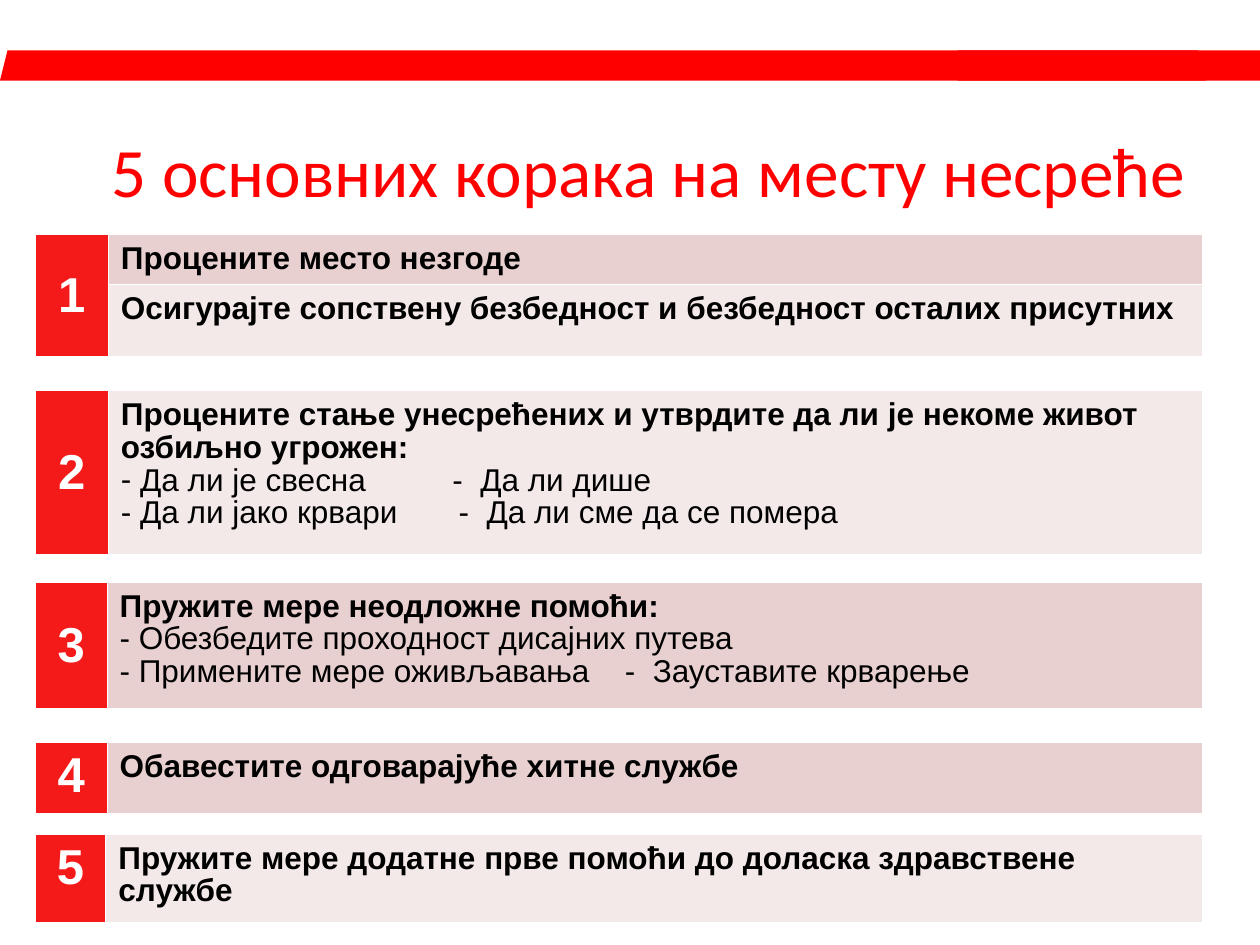
from lxml.etree import SubElement
from pptx import Presentation
from pptx.dml.color import RGBColor
from pptx.enum.shapes import MSO_SHAPE as Shape
from pptx.enum.text import MSO_ANCHOR as Anchor, PP_ALIGN as Align
from pptx.oxml.ns import qn
from pptx.util import Inches, Pt

RED = RGBColor(0xFF, 0x00, 0x00)
NUMBER_RED = RGBColor(0xF4, 0x1A, 0x1A)
ROSE = RGBColor(0xE8, 0xD0, 0xD0)
PALE = RGBColor(0xF4, 0xE9, 0xE9)
WHITE = RGBColor(0xFF, 0xFF, 0xFF)
BLACK = RGBColor(0x00, 0x00, 0x00)

GAP = None


def write(paragraph, text, size=18, font="Arial", color=BLACK, bold=False,
          align=Align.LEFT, spacing=None, bullet=None, tab=None):
    paragraph.alignment = align
    if spacing:
        paragraph.line_spacing = spacing
    properties = paragraph._p.get_or_add_pPr()
    if bullet:
        properties.set("marL", "0")
        properties.set("indent", "0")
        tint = SubElement(properties, qn("a:buClr"))
        SubElement(tint, qn("a:srgbClr"), val=str(color))
        SubElement(properties, qn("a:buFont"), typeface=font)
        SubElement(properties, qn("a:buChar"), char=bullet)
    if tab:
        stops = SubElement(properties, qn("a:tabLst"))
        SubElement(stops, qn("a:tab"), pos=str(Inches(tab)), algn="l")
    run = paragraph.add_run()
    run.text = text
    run.font.size = Pt(size)
    run.font.name = font
    run.font.bold = bold
    run.font.color.rgb = color


class StepsSlide:
    left, width = 0.28, 9.26
    line_spacing = 0.93
    border = Pt(0.45)

    def __init__(self, slide):
        self.slide = slide

    def band(self, kind, left, width):
        band = self.slide.shapes.add_shape(
            kind, Inches(left), Inches(0.4), Inches(width), Inches(0.24))
        band.shadow.inherit = False
        band.fill.solid()
        band.fill.fore_color.rgb = RED
        band.line.fill.background()

    def title(self, text):
        box = self.slide.shapes.add_textbox(
            Inches(0.51), Inches(0.99), Inches(9), Inches(0.71))
        frame = box.text_frame
        frame.word_wrap = True
        frame.vertical_anchor = Anchor.MIDDLE
        write(frame.paragraphs[0], text, size=39.6, font="Calibri",
              color=RED, align=Align.RIGHT)

    def outline(self, cell):
        properties = cell._tc.get_or_add_tcPr()
        for side in ("a:lnL", "a:lnR", "a:lnT", "a:lnB"):
            line = SubElement(properties, qn(side), w=str(self.border))
            fill = SubElement(line, qn("a:solidFill"))
            SubElement(fill, qn("a:srgbClr"), val=str(WHITE))

    def style_cell(self, cell, fill, top, anchor=Anchor.TOP):
        cell.margin_left = cell.margin_right = Inches(0.1)
        cell.margin_top, cell.margin_bottom = Inches(top), Inches(0.05)
        cell.vertical_anchor = anchor
        self.outline(cell)
        cell.fill.solid()
        cell.fill.fore_color.rgb = fill

    def number(self, cell, text, anchor):
        self.style_cell(cell, NUMBER_RED, 0.08, anchor)
        write(cell.text_frame.paragraphs[0], text, size=28, color=WHITE,
              bold=True, align=Align.CENTER, spacing=self.line_spacing)

    def step(self, cell, fill, heading, points):
        self.style_cell(cell, fill, 0.07)
        frame = cell.text_frame
        write(frame.paragraphs[0], heading, bold=True, spacing=self.line_spacing)
        for text, tab in points:
            write(frame.add_paragraph(), text, bullet="-", tab=tab,
                  spacing=self.line_spacing)

    def gap(self, first, second):
        for cell in (first, second):
            cell.margin_top = cell.margin_bottom = 0
            self.outline(cell)
            cell.fill.background()
            paragraph = cell.text_frame.paragraphs[0]
            SubElement(paragraph._p, qn("a:endParaRPr"), sz="800")
        first.merge(second)

    def steps(self, top, number_width, rows):
        heights = [0.27 if row is GAP else row[0] for row in rows]
        table = self.slide.shapes.add_table(
            len(rows), 2, Inches(self.left), Inches(top),
            Inches(self.width), Inches(sum(heights))).table
        table.first_row = table.horz_banding = False
        table.columns[0].width = Inches(number_width)
        table.columns[1].width = Inches(self.width - number_width)
        for index, (height, row) in enumerate(zip(heights, rows)):
            table.rows[index].height = Inches(height)
            label, body = table.cell(index, 0), table.cell(index, 1)
            if row is GAP:
                self.gap(label, body)
                continue
            _, number, anchor, fill, heading, points = row
            if number:
                self.number(label, number, anchor)
            else:
                self.style_cell(label, NUMBER_RED, 0.08)
                table.cell(index - 1, 0).merge(label)
            self.step(body, fill, heading, points)


def main():
    deck = Presentation()
    deck.slide_width, deck.slide_height = Inches(10), Inches(7.5)
    page = StepsSlide(deck.slides.add_slide(deck.slide_layouts[6]))

    page.steps(6.35, 0.56, [
        GAP,
        (0.7, "5", Anchor.TOP, PALE,
         "Пружите мере додатне прве помоћи до доласка здравствене службе", []),
    ])
    page.title("5 основних корака на месту несреће")
    page.band(Shape.TRAPEZOID, 0, 9.57)
    page.band(Shape.RECTANGLE, 7.6, 2.4)
    page.steps(1.86, 0.58, [
        (0.4, "1", Anchor.MIDDLE, ROSE, "Процените место незгоде", []),
        (0.57, None, None, PALE,
         "Осигурајте сопствену безбедност и безбедност осталих присутних", []),
        GAP,
        (1.3, "2", Anchor.MIDDLE, PALE,
         "Процените стање унесрећених и утврдите да ли је некоме живот озбиљно угрожен:",
         [(" Да ли је свесна\t-  Да ли дише", 2.63),
          (" Да ли јако крвари\t-  Да ли сме да се помера", 2.68)]),
    ])
    page.steps(4.62, 0.57, [
        (1, "3", Anchor.MIDDLE, ROSE, "Пружите мере неодложне помоћи:",
         [(" Обезбедите проходност дисајних путева", None),
          (" Примените мере оживљавања\t-  Зауставите крварење", 4.01)]),
        GAP,
        (0.54, "4", Anchor.TOP, ROSE, "Обавестите одговарајуће хитне службе", []),
    ])
    deck.save("out.pptx")


if __name__ == "__main__":
    main()
